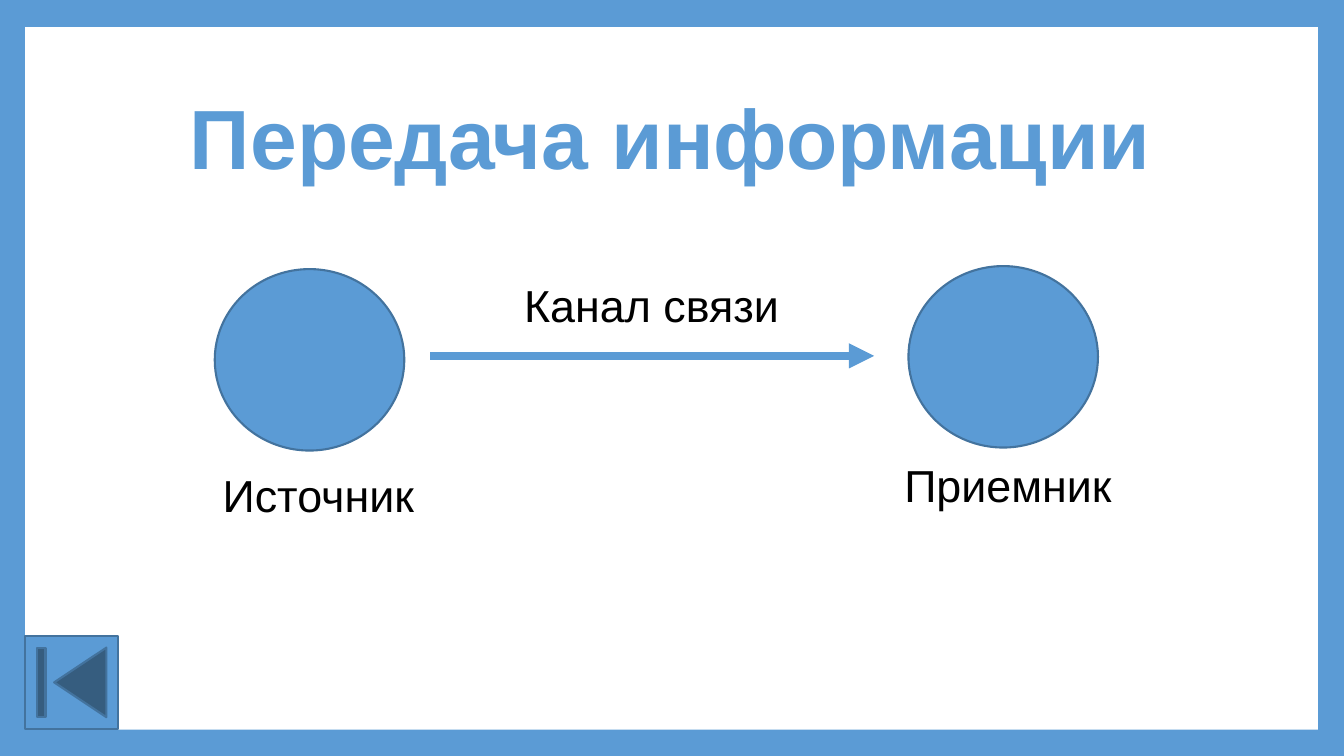
from lxml import etree
from pptx import Presentation
from pptx.dml.color import RGBColor
from pptx.enum.shapes import MSO_CONNECTOR, MSO_SHAPE
from pptx.enum.text import MSO_ANCHOR, MSO_AUTO_SIZE, PP_ALIGN
from pptx.oxml.ns import qn
from pptx.util import Inches, Pt

BLUE = RGBColor(0x5B, 0x9B, 0xD5)
DARK_BLUE = RGBColor(0x43, 0x73, 0x9E)
WHITE = RGBColor(0xFF, 0xFF, 0xFF)
BLACK = RGBColor(0x00, 0x00, 0x00)


def add_filled_shape(slide, kind, box, fill, outline=None):
    shape = slide.shapes.add_shape(kind, *map(Inches, box))
    shape.shadow.inherit = False
    shape.fill.solid()
    shape.fill.fore_color.rgb = fill
    if outline is None:
        shape.line.fill.background()
    else:
        shape.line.color.rgb = outline
        shape.line.width = Pt(1.5)


def add_text(slide, box, text, size, color, bold=False):
    text_box = slide.shapes.add_textbox(*map(Inches, box))
    text_frame = text_box.text_frame
    text_frame.text = text
    font = text_frame.paragraphs[0].runs[0].font
    font.name = "Arial"
    font.size = Pt(size)
    font.bold = bold
    font.color.rgb = color
    return text_frame


def add_title(slide, box, text):
    text_frame = add_text(slide, box, text, 60, BLUE, bold=True)
    text_frame.word_wrap = True
    text_frame.vertical_anchor = MSO_ANCHOR.MIDDLE
    paragraph = text_frame.paragraphs[0]
    paragraph.alignment = PP_ALIGN.CENTER
    paragraph.line_spacing = 0.9


def add_label(slide, box, text):
    text_frame = add_text(slide, box, text, 32, BLACK)
    text_frame.word_wrap = False
    text_frame.auto_size = MSO_AUTO_SIZE.SHAPE_TO_FIT_TEXT


def add_arrow(slide, left, right, y):
    arrow = slide.shapes.add_connector(
        MSO_CONNECTOR.STRAIGHT, Inches(left), Inches(y), Inches(right), Inches(y))
    arrow.line.color.rgb = BLUE
    arrow.line.width = Pt(6)
    etree.SubElement(arrow.line._get_or_add_ln(), qn("a:tailEnd"), type="triangle")
    etree.SubElement(arrow._element.spPr, qn("a:effectLst"))


def add_transfer_diagram(slide, left, top):
    """Source and receiver circles joined by a channel arrow, with captions."""
    nodes = [
        ("Источник", 0, 0.03, -0.02, 1.95, 2.12),
        ("Приемник", 6.88, 0, 6.74, 1.85, 2.28),
    ]
    for name, circle_x, circle_y, label_x, label_y, label_width in nodes:
        circle_box = (left + circle_x, top + circle_y, 1.88, 1.8)
        add_filled_shape(slide, MSO_SHAPE.OVAL, circle_box, BLUE, DARK_BLUE)
        add_label(slide, (left + label_x, top + label_y, label_width, 0.64), name)
    add_arrow(slide, left + 2.14, left + 6.54, top + 0.89)
    add_label(slide, (left + 2.97, top + 0.07, 2.75, 0.64), "Канал связи")


def build_slide(presentation):
    slide = presentation.slides.add_slide(presentation.slide_layouts[6])
    slide.background.fill.solid()
    slide.background.fill.fore_color.rgb = BLUE
    add_filled_shape(slide, MSO_SHAPE.RECTANGLE, (0.25, 0.27, 12.82, 6.97), WHITE)
    add_title(slide, (1.25, 0.67, 10.8, 1.48), "Передача информации")
    add_transfer_diagram(slide, 2.13, 2.64)
    add_filled_shape(slide, MSO_SHAPE.ACTION_BUTTON_BEGINNING,
                     (0.25, 6.31, 0.92, 0.92), BLUE, DARK_BLUE)


def main():
    presentation = Presentation()
    presentation.slide_width = Inches(13.33)
    presentation.slide_height = Inches(7.5)
    build_slide(presentation)
    presentation.save("out.pptx")


if __name__ == "__main__":
    main()
